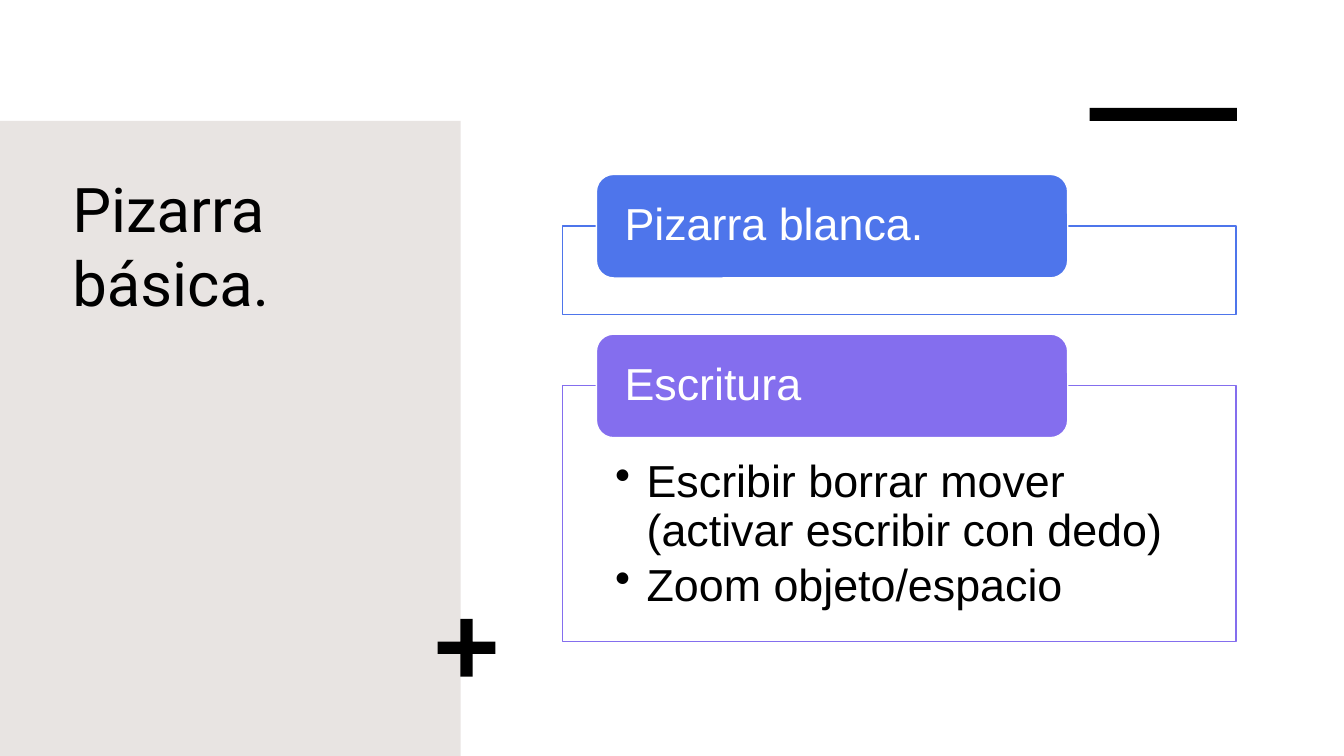
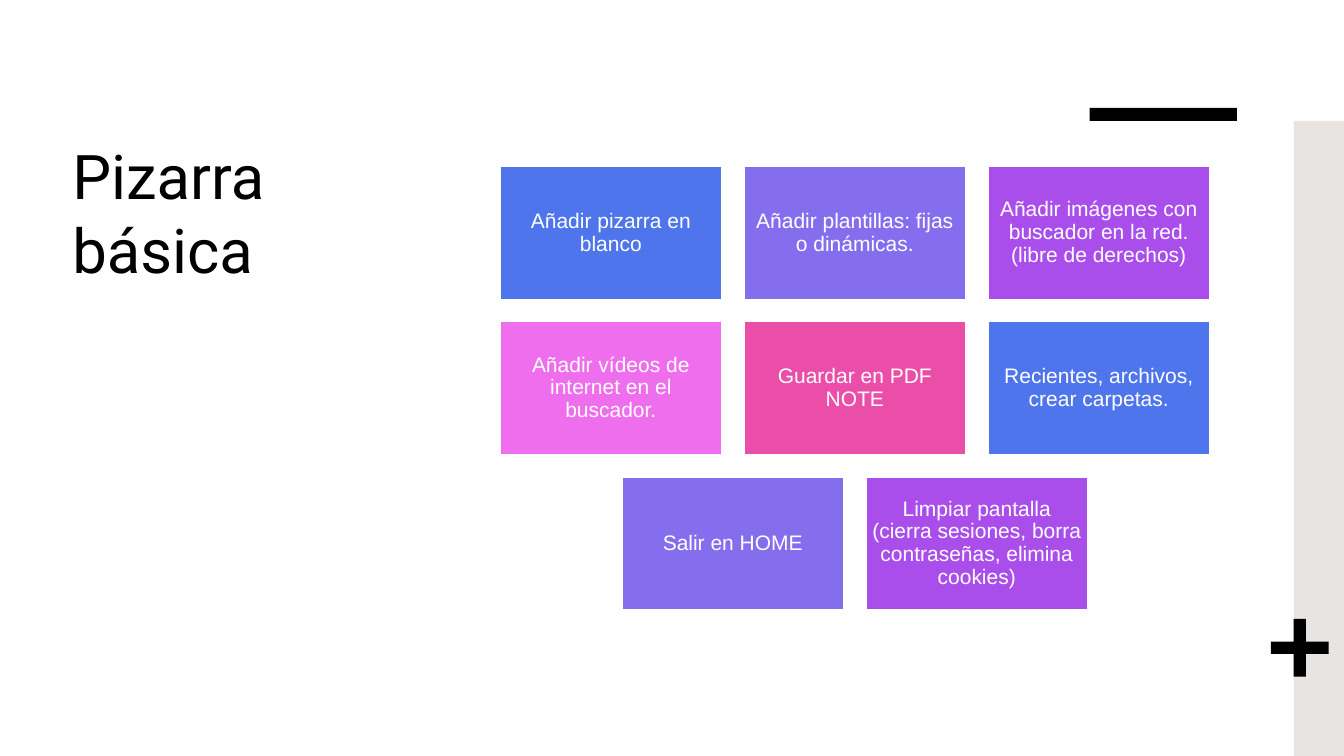
import lxml.etree
import pptx
import pptx.dml.color
import pptx.enum.shapes
import pptx.enum.text
import pptx.oxml.ns
import pptx.util

Pt = pptx.util.Pt
FORM = pptx.enum.shapes.MSO_SHAPE
ALIGN = pptx.enum.text.PP_ALIGN
ANCHOR = pptx.enum.text.MSO_ANCHOR
INK = {
    "black": "000000", "white": "FFFFFF", "sand": "E8E4E2",
    "blue": "4E75EB", "violet": "846EEE", "purple": "AA4EEB",
    "pink": "EE6EEE", "rose": "EB4EA9",
}

deck = pptx.Presentation()
deck.slide_width = pptx.util.Inches(13.33)
deck.slide_height = pptx.util.Inches(7.5)

# Text styles: font, paragraph and frame values
TITLE = {
    "font": {"name": "Roboto", "size": Pt(44)}, "ink": "black",
    "para": {"alignment": ALIGN.LEFT},
    "frame": {"vertical_anchor": ANCHOR.TOP},
}
TAB = {
    "font": {"name": "Arial", "size": Pt(32)}, "ink": "white",
    "para": {"alignment": ALIGN.LEFT, "line_spacing": 0.9},
    "frame": {"vertical_anchor": ANCHOR.MIDDLE, "margin_left": Pt(16.5),
              "margin_right": Pt(16.5), "margin_top": 0, "margin_bottom": 0},
}
LIST = {
    "font": {"name": "Arial", "size": Pt(32)}, "ink": "black",
    "para": {"alignment": ALIGN.LEFT, "line_spacing": 0.9,
             "space_after": Pt(4.8)},
    "frame": {"vertical_anchor": ANCHOR.TOP, "margin_left": Pt(37.4),
              "margin_right": Pt(37.4), "margin_top": Pt(52.5),
              "margin_bottom": Pt(18)},
    "bullet": Pt(22.5),
}
TILE = {
    "font": {"name": "Arial", "size": Pt(15)}, "ink": "white",
    "para": {"alignment": ALIGN.CENTER, "line_spacing": 0.9},
    "frame": {"vertical_anchor": ANCHOR.MIDDLE, "margin_left": Pt(4.5),
              "margin_right": Pt(4.5), "margin_top": Pt(4.5),
              "margin_bottom": Pt(4.5)},
}


def apply(item, values):
    for name, value in values.items():
        setattr(item, name, value)


def tint(name):
    return pptx.dml.color.RGBColor.from_string(INK[name])


def place(box):
    """Turn percent shares of the slide into lengths."""
    x, y, w, h = box
    wide, high = deck.slide_width / 100, deck.slide_height / 100
    return [int(n) for n in (x * wide, y * high, w * wide, h * high)]


def write(shape, lines, style):
    frame = shape.text_frame
    apply(frame, {"word_wrap": True, **style["frame"]})
    for i, line in enumerate(lines):
        para = frame.add_paragraph() if i else frame.paragraphs[0]
        apply(para, style["para"])
        run = para.add_run()
        run.text = line
        apply(run.font, style["font"])
        run.font.color.rgb = tint(style["ink"])
        if "bullet" in style:
            props = para._p.get_or_add_pPr()
            props.set("marL", str(style["bullet"]))
            props.set("indent", str(-style["bullet"]))
            mark = pptx.oxml.ns.qn("a:buChar")
            lxml.etree.SubElement(props, mark, char="•")


def draw(slide, form, box, fill, line=None):
    shape = slide.shapes.add_shape(form, *place(box))
    shape.shadow.inherit = False
    shape.fill.solid()
    shape.fill.fore_color.rgb = tint(fill)
    if line:
        shape.line.color.rgb = tint(line)
        shape.line.width = Pt(1)
    else:
        shape.line.fill.background()
    return shape


def base(title, top, left, width):
    """Start a slide: sand band, title, bar and plus on the band's edge."""
    slide = deck.slides.add_slide(deck.slide_layouts[6])
    draw(slide, FORM.RECTANGLE, (left, 16, width, 84), "sand")
    label = slide.shapes.add_textbox(*place((4.65, top, 26.25, 58.67)))
    write(label, [title], TITLE)
    draw(slide, FORM.RECTANGLE, (81.08, 14.27, 10.95, 1.73), "black")
    # The plus sits on whichever band edge faces the content
    edge = left or width
    plus = draw(slide, FORM.CROSS, (edge - 1.72, 81.87, 4.3, 7.64), "black")
    plus.adjustments[0] = 0.395
    return slide


def panel(slide, box, hue, head, items=()):
    """Outlined box with a tab over its top edge and a bullet list."""
    x, y, w, h = box
    body = draw(slide, FORM.RECTANGLE, box, "white", hue)
    if items:
        write(body, items, LIST)
    tab = draw(slide, FORM.ROUNDED_RECTANGLE,
               (x + 0.05 * w, y - 6.8, 0.7 * w, 13.7), hue, "white")
    write(tab, [head], TAB)


def tiles(slide, box, rows):
    """Rows of equal tiles, each row centred; gaps are a tenth of a tile."""
    x, y, w, h = box
    most = max(len(row) for row in rows)
    wide = w / (1.1 * most - 0.1)
    high = h / (len(rows) + (len(rows) - 1) / 6)
    for r, row in enumerate(rows):
        start = x + (most - len(row)) * 1.1 * wide / 2
        for c, (hue, text) in enumerate(row):
            spot = (start + c * 1.1 * wide, y + r * high * 7 / 6, wide, high)
            tile = draw(slide, FORM.RECTANGLE, spot, hue, "white")
            write(tile, [text], TILE)


def main():
    # Slide 1: two panels
    slide = base("Pizarra básica.", 22, 0, 34.28)
    panel(slide, (41.87, 29.87, 50.1, 11.73), "blue", "Pizarra blanca.")
    panel(slide, (41.87, 51, 50.1, 33.87), "violet", "Escritura",
          ["Escribir borrar mover (activar escribir con dedo)",
           "Zoom objeto/espacio"])

    # Slide 2: grid of tiles
    slide = base("Pizarra básica", 17.6, 96.28, 3.72)
    tiles(slide, (37.2, 22, 52.8, 58.67), [
        [("blue", "Añadir pizarra en blanco"),
         ("violet", "Añadir plantillas: fijas o dinámicas."),
         ("purple", "Añadir imágenes con buscador en la red. "
                    "(libre de derechos)")],
        [("pink", "Añadir vídeos de internet en el buscador."),
         ("rose", "Guardar en PDF NOTE"),
         ("blue", "Recientes, archivos, crear carpetas.")],
        [("violet", "Salir en HOME"),
         ("purple", "Limpiar pantalla (cierra sesiones, "
                    "borra contraseñas, elimina cookies)")],
    ])
    deck.save("out.pptx")


if __name__ == "__main__":
    main()
